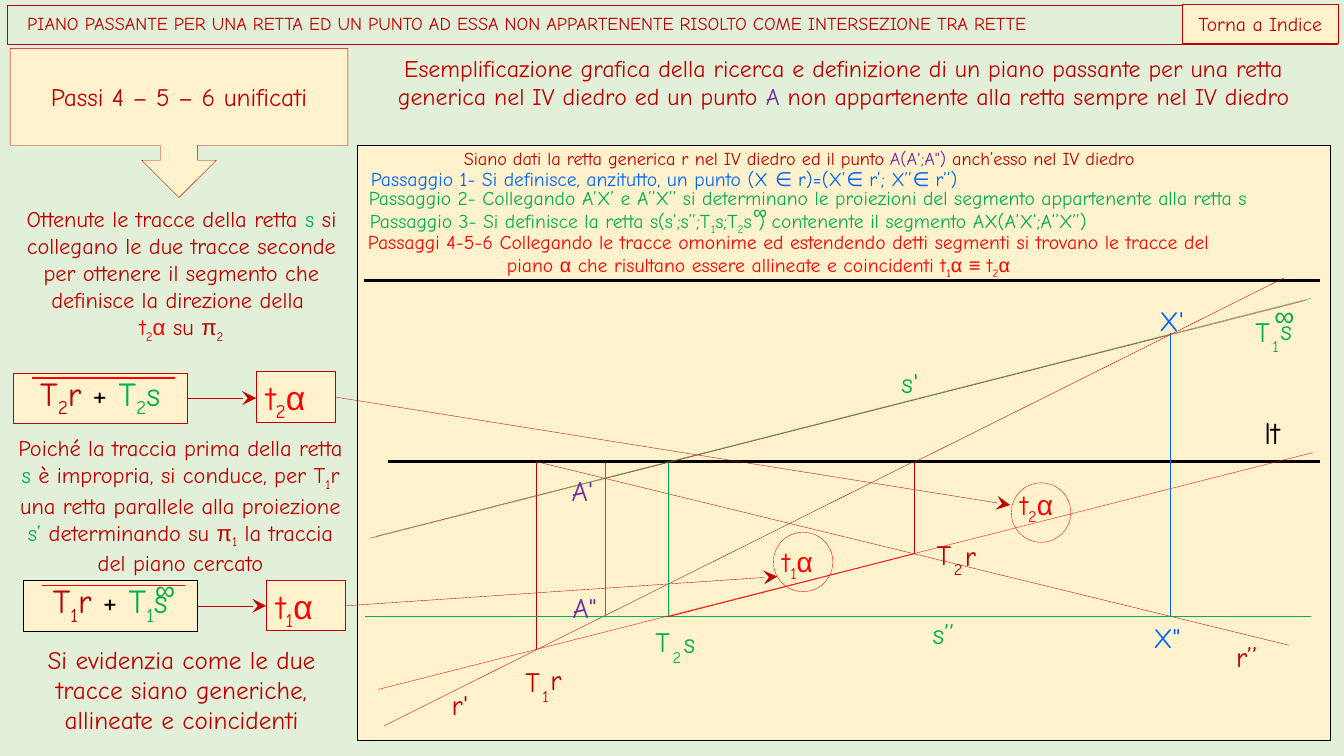
from itertools import groupby

from lxml import etree
from pptx import Presentation, util as u
from pptx.dml import color as c
from pptx.enum import shapes, text
from pptx.oxml import ns

PX = 9144
RED, BRIGHT, GREEN, BLUE = "C00000", "FF0000", "00B050", "0066FF"
VIOLET, BLACK, CREAM, MINT = "7030A0", "000000", "FFF2CC", "E2F0D9"
SHAPE, ANCHOR, ALIGN = shapes.MSO_SHAPE, text.MSO_ANCHOR, text.PP_ALIGN


def rgb(value):
    return c.RGBColor.from_string(value)


def px(*values):
    return [u.Emu(value * PX) for value in values]


def write(para, words, size=16, color=RED):
    """Underscore lowers the next character; symbols use the second font."""
    marked = [(char, before == "_") for before, char in zip(" " + words, words) if char != "_"]
    for (lowered, symbol), chars in groupby(marked, lambda m: (m[1], m[0] in "απ∞≡")):
        span = para.add_run()
        span.text = "".join(char for char, _ in chars)
        span.font.size = u.Pt(size)
        span.font.name = "Arial" if symbol else "Comic Neue"
        span.font.color.rgb = rgb(color)
        if lowered:
            span._r.get_or_add_rPr().set("baseline", "-25000")


class Board:
    def __init__(self, deck):
        self.page = deck.slides.add_slide(deck.slide_layouts[5])
        self.page.background.fill.solid()
        self.page.background.fill.fore_color.rgb = rgb(MINT)

    def style(self, box, fill=None, line=RED, width=0.25):
        if fill:
            box.fill.solid()
            box.fill.fore_color.rgb = rgb(fill)
        else:
            box.fill.background()
        box.line.color.rgb = rgb(line)
        box.line.width = u.Pt(width)

    def fill_text(self, box, paras, size, align=ALIGN.CENTER, anchor=ANCHOR.TOP,
                  inset=(10, 5), wrap=True, grow=True):
        frame = box.text_frame
        frame.word_wrap = wrap
        frame.auto_size = text.MSO_AUTO_SIZE.SHAPE_TO_FIT_TEXT if grow else text.MSO_AUTO_SIZE.NONE
        frame.vertical_anchor = anchor
        frame.margin_left = frame.margin_right = u.Emu(inset[0] * PX)
        frame.margin_top = frame.margin_bottom = u.Emu(inset[1] * PX)
        for index, spans in enumerate(paras):
            para = frame.add_paragraph() if index else frame.paragraphs[0]
            para.alignment = align
            for words, color in spans:
                write(para, words, size, color)
        return frame

    def title(self, at, words):
        box = self.page.shapes.title
        box.left, box.top, box.width, box.height = px(*at)
        self.style(box)
        frame = self.fill_text(box, [[(words, RED)]], 13, ALIGN.LEFT, ANCHOR.MIDDLE, (20, 5), grow=False)
        frame.paragraphs[0].line_spacing = 0.9

    def shape(self, kind, at, paras=(), size=24, fill=CREAM, line=RED, width=0.25, **layout):
        box = self.page.shapes.add_shape(kind, *px(*at))
        box.shadow.inherit = False
        self.style(box, fill, line, width)
        if paras:
            self.fill_text(box, paras, size, **layout)
        return box

    def text(self, at, paras, size, **layout):
        return self.fill_text(self.page.shapes.add_textbox(*px(*at)), paras, size, **layout)

    def label(self, at, words, color, size=20):
        self.text(at, [[(words, color)]], size, align=ALIGN.LEFT, inset=(0, 0), wrap=False)

    def trace(self, left, top, number, letter, color):
        shift, rise, narrow = (28, 1, 11) if number == 2 else (25, -2, 8)
        self.label((left, top, 19, 34), "T", color)
        self.label((left + 17, top + 3, narrow, 22), f"_{number}", color)
        self.label((left + shift, top + rise, 14, 34), letter, color)

    def line(self, ends, color=RED, width=0.25, arrow=False):
        link = self.page.shapes.add_connector(shapes.MSO_CONNECTOR.STRAIGHT, *px(*ends))
        link.line.color.rgb = rgb(color)
        link.line.width = u.Pt(width)
        props = link._element.spPr
        etree.SubElement(props, ns.qn("a:effectLst"))
        if arrow:
            etree.SubElement(props.find(ns.qn("a:ln")), ns.qn("a:tailEnd"),
                             type="stealth", w="lg", len="lg")


def draw_steps(board):
    board.shape(SHAPE.DOWN_ARROW_CALLOUT, (10, 48, 335, 148), [[("Passi 4 – 5 – 6 unificati", RED)]],
                18, anchor=ANCHOR.MIDDLE, grow=False)
    board.text((345, 48, 984, 67), [[
        ("Esemplificazione grafica della ricerca e definizione di un piano passante per una retta "
         "generica nel IV diedro ed un punto ", RED),
        ("A", VIOLET), (" non appartenente alla retta sempre nel IV diedro", RED)]], 17)
    board.text((7, 199, 346, 172), [
        [("Ottenute le tracce della retta ", RED), ("s", GREEN),
         (" si collegano le due tracce seconde per ottenere il segmento che definisce "
          "la direzione della ", RED)],
        [("t_2α", BRIGHT), (" su π_2", RED)]], 16)
    board.text((7, 426, 344, 145), [[
        ("Poiché la traccia prima della retta ", RED), ("s", GREEN),
        (" è impropria, si conduce, per T_1r una retta parallele alla proiezione ", RED),
        ("s’ ", GREEN), ("determinando su π_1 la traccia del piano cercato", RED)]], 16)
    board.text((7, 634, 346, 101), [[
        ("Si evidenzia come le due tracce siano generiche, allineate e coincidenti", RED)]], 18)
    for number, left, top, border in ((2, 13, 370, RED), (1, 23, 576, BLACK)):
        board.shape(SHAPE.RECTANGLE, (left, top, 173, 50),
                    [[(f"T_{number}r", RED), (" + ", BLACK), (f"T_{number}s", GREEN)]],
                    line=border, anchor=ANCHOR.BOTTOM)
        board.line((left + 19, top + 5, left + 161, top + 5), BRIGHT, 0.75)
        board.shape(SHAPE.RECTANGLE, (left + 241, top - 1 if number == 2 else top, 79, 50),
                    [[(f"t_{number}α", BRIGHT)]], width=0.75, align=ALIGN.LEFT)
        board.line((left + 173, top + 25, left + 241, top + 25), arrow=True)
    board.label((154, 568, 20, 34), "∞", GREEN)


def draw_construction(board):
    board.shape(SHAPE.RECTANGLE, (355, 144, 965, 591), line=BLACK, width=0)
    segments = (
        (BLACK, 0, ((361, 278, 1309, 278), (385, 458, 1309, 458))),
        (RED, 0.25, ((381, 720, 906, 458), (908, 458, 1273, 276), (532, 458, 1278, 640),
                     (532, 458, 532, 645), (907, 458, 907, 549))),
        ("4472C4", 0.25, ((600, 459, 600, 612),)),
        (BLUE, 0.25, ((1161, 330, 1161, 611),)),
        (GREEN, 0.25, ((599, 611, 1161, 611), (599, 475, 1161, 332), (663, 459, 663, 612),
                       (373, 532, 1300, 296), (362, 611, 1300, 611))),
        (BRIGHT, 0.5, ((662, 612, 908, 549),)),
        (BRIGHT, 0.25, ((375, 684, 1302, 449), (367, 534, 1295, 298))),
    )
    for color, width, group in segments:
        for ends in group:
            board.line(ends, color, width)
    board.label((1254, 410, 35, 51), "lt", BLACK, 22)
    for left, top, width, words, color in (
            (567, 470, 31, "A'", VIOLET), (568, 586, 32, 'A"', VIOLET),
            (448, 682, 24, "r'", RED), (1226, 634, 24, "r’’", RED),
            (1150, 301, 31, "X'", BLUE), (1144, 616, 32, 'X"', BLUE),
            (894, 363, 24, "s'", GREEN), (925, 612, 24, "s’’", GREEN),
            (1264, 296, 20, "∞", GREEN)):
        board.label((left, top, width, 34), words, color)
    for trace in ((929, 533, 2, "r", RED), (521, 659, 1, "r", RED),
                  (650, 620, 2, "s", GREEN), (1245, 312, 1, "s", GREEN)):
        board.trace(*trace)
    for number, left, top, turn, words_top in ((2, 1003, 479, 0, 479), (1, 767, 528, 330, 535)):
        board.text((left - 1, words_top, 71, 44), [[(f"t_{number}α", BRIGHT)]], 20, align=ALIGN.LEFT)
        circle = board.shape(SHAPE.OVAL, (left, top, 59, 59), fill=None, line=BRIGHT)
        circle.rotation = turn
    board.line((333, 394, 1002, 501), arrow=True)
    board.line((343, 601, 771, 572), arrow=True)


def draw_passages(board):
    board.text((460, 146, 746, 22), [[
        ("Siano dati la retta generica r nel IV diedro ed il punto ", RED),
        ("A(A';A\") ", VIOLET), ("anch’esso nel IV diedro", RED)]],
        13, align=ALIGN.LEFT, inset=(0, 0))
    for at, words, color in (
            ((358, 161, 650, 34),
             "Passaggio 1- Si definisce, anzitutto, un punto (X ∈ r)=(X’∈ r’; X’’∈ r’’)", BLUE),
            ((356, 180, 956, 34),
             "Passaggio 2- Collegando A’X’ e A’’X’’ si determinano le proiezioni del segmento "
             "appartenente alla retta s", GREEN),
            ((357, 202, 807, 34),
             "Passaggio 3- Si definisce la retta s(s’;s’’;T_1s;T_2s ) contenente il segmento "
             "AX(A’X’;A’’X’’)", GREEN)):
        board.text(at, [[(words, color)]], 14, align=ALIGN.LEFT)
    board.label((747, 198, 14, 24), "∞", GREEN, 14)
    frame = board.text((355, 223, 948, 57), [
        [("Passaggi 4-5-6 Collegando le tracce omonime ed estendendo detti segmenti "
          "si trovano le tracce del", BRIGHT)],
        [("piano α che risultano essere allineate e coincidenti t_1α ≡ t_2α", BRIGHT)]],
        14, align=ALIGN.LEFT)
    frame.paragraphs[1]._p.get_or_add_pPr().set("marL", str(138 * PX))


def main():
    deck = Presentation()
    deck.slide_width, deck.slide_height = px(1333, 750)
    board = Board(deck)
    board.title((7, 5, 1319, 39), "PIANO PASSANTE PER UNA RETTA ED UN PUNTO AD ESSA NON APPARTENENTE "
                                  "RISOLTO COME INTERSEZIONE TRA RETTE")
    board.shape(SHAPE.RECTANGLE, (1173, 4, 154, 39), [[("Torna a Indice", RED)]], 14,
                anchor=ANCHOR.MIDDLE)
    draw_steps(board)
    draw_construction(board)
    draw_passages(board)
    deck.save("out.pptx")


if __name__ == "__main__":
    main()
